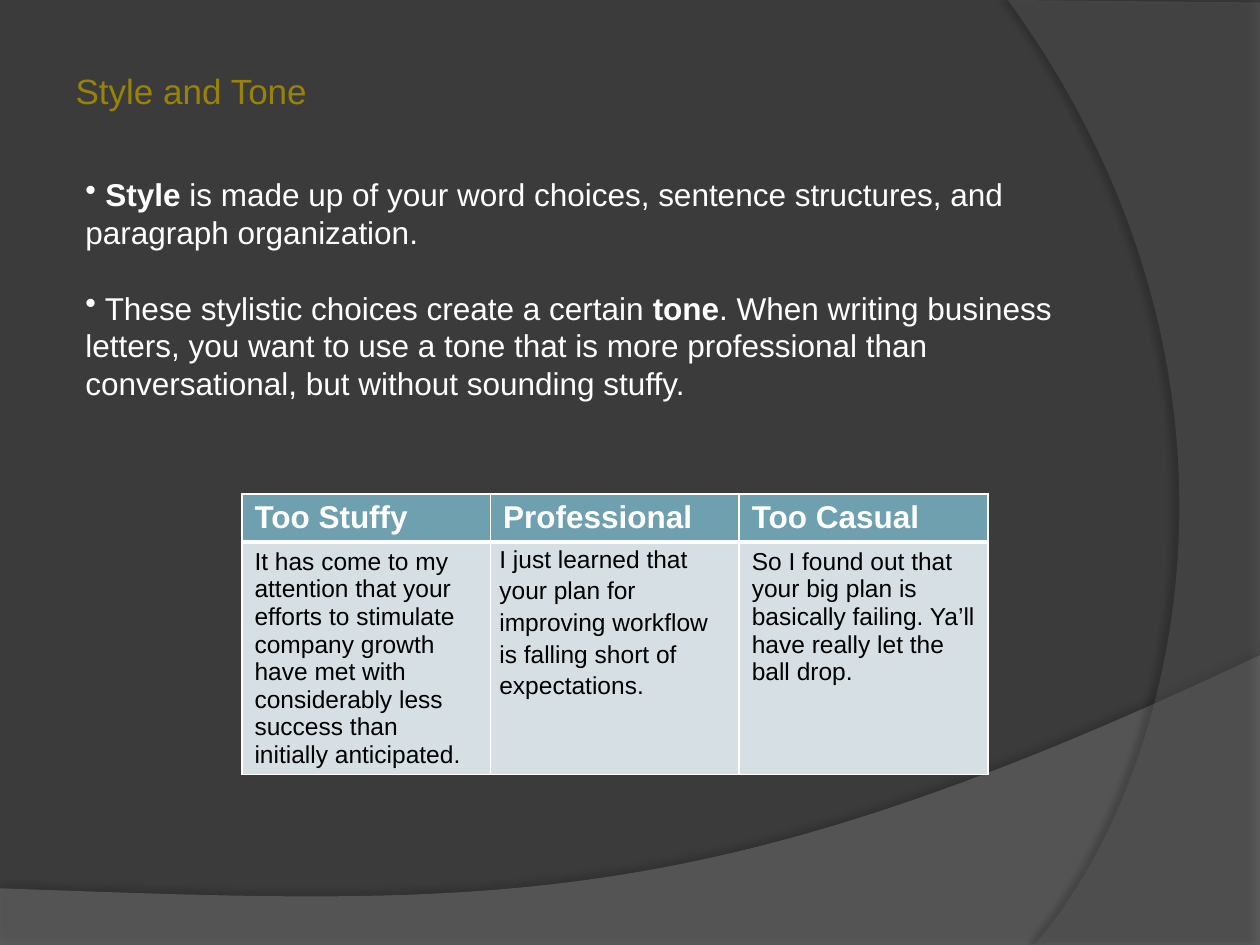
import pptx
import pptx.util
import pptx.oxml
import pptx.oxml.ns
import pptx.dml.color
import pptx.enum.text

WIDE = pptx.util.Inches(10)
HIGH = pptx.util.Inches(7.5)
FONT = "Arial"
WHITE = "FFFFFF"
HEADS = ["Too Stuffy", "Professional", "Too Casual"]
QUOTES = [
    "It has come to my attention that your efforts to stimulate company growth "
    "have met with considerably less success than initially anticipated.",
    "I just learned that your plan for improving workflow is falling short of expectations.",
    "So I found out that your big plan is basically failing. "
    "Ya’ll have really let the ball drop.",
]
POINTS = [
    [(" Style", True),
     (" is made up of your word choices, sentence structures, and paragraph organization.", False)],
    [(" These stylistic choices create a certain ", False), ("tone", True),
     (". When writing business letters, you want to use a tone that is more professional "
      "than conversational, but without sounding stuffy.", False)],
]


def across(share):
    """Turn a percentage of the slide width into a length."""
    return round(WIDE * share / 100)


def down(share):
    """Turn a percentage of the slide height into a length."""
    return round(HIGH * share / 100)


def box(left, top, width, height):
    """Turn four percentages into a place and a size."""
    return across(left), down(top), across(width), down(height)


def color(code):
    """Turn a hex string into a colour."""
    return pptx.dml.color.RGBColor.from_string(code)


def node(text):
    """Parse one drawing element."""
    head, tail = text.split(">", 1)
    names = pptx.oxml.ns.nsdecls("a")
    if head.endswith("/"):
        return pptx.oxml.parse_xml(f"{head[:-1]} {names}/>{tail}")
    return pptx.oxml.parse_xml(f"{head} {names}>{tail}")


def style(run, size, code, bold=False):
    """Set the font of a run."""
    font = run.font
    font.name, font.size, font.bold = FONT, pptx.util.Pt(size), bold
    font.color.rgb = color(code)


def curve(start, first, second, end, steps=60):
    """List points along a cubic curve."""
    spots = []
    for step in range(steps + 1):
        t = step / steps
        parts = ((1 - t) ** 3, 3 * t * (1 - t) ** 2, 3 * t * t * (1 - t), t ** 3)
        spots.append(tuple(sum(p * spot[axis] for p, spot in zip(parts, (start, first, second, end)))
                           for axis in (0, 1)))
    return spots


def wave(slide, spots, code, alpha, shade):
    """Draw a translucent shape with a soft shadow."""
    places = [(across(x), down(y)) for x, y in spots]
    build = slide.shapes.build_freeform(*places[0])
    build.add_line_segments(places[1:], close=True)
    shape = build.convert_to_shape()
    shape.fill.solid()
    shape.fill.fore_color.rgb = color(code)
    shape.line.fill.background()
    tint = shape.fill._xPr.find(".//" + pptx.oxml.ns.qn("a:srgbClr"))
    tint.append(node(f'<a:alpha val="{alpha * 1000}"/>'))
    dark, blur, gap, turn = shade
    blur, gap = pptx.util.Pt(blur), pptx.util.Pt(gap)
    shape._element.spPr.append(node(
        f'<a:effectLst><a:outerShdw blurRad="{blur}" dist="{gap}" dir="{turn * 60000}">'
        f'<a:srgbClr val="000000"><a:alpha val="{dark * 1000}"/></a:srgbClr>'
        '</a:outerShdw></a:effectLst>'))


def title(slide, text):
    """Place and format the title."""
    shape = slide.shapes.title
    shape.left, shape.top, shape.width, shape.height = box(5, 6.67, 40, 5.87)
    frame = shape.text_frame
    frame.text = text
    frame.vertical_anchor = pptx.enum.text.MSO_ANCHOR.TOP
    para = frame.paragraphs[0]
    para.alignment = pptx.enum.text.PP_ALIGN.LEFT
    style(para.runs[0], 20, "998307")


def bullets(slide, points):
    """Write the bulleted points."""
    frame = slide.shapes.add_textbox(*box(5.8, 17.73, 84.2, 25.6)).text_frame
    frame.word_wrap = True
    frame.vertical_anchor = pptx.enum.text.MSO_ANCHOR.MIDDLE
    for index, point in enumerate(points):
        para = frame.add_paragraph() if index else frame.paragraphs[0]
        if index:
            para.space_before = pptx.util.Pt(21.6)
        para._p.get_or_add_pPr().append(node('<a:buChar char="•"/>'))
        for text, bold in point:
            run = para.add_run()
            run.text = text
            style(run, 18, WHITE, bold)


def edges(cell, low):
    """Draw white borders, with the given weight at the bottom."""
    props = cell._tc.get_or_add_tcPr()
    for index, (side, weight) in enumerate(zip("LRTB", (1, 1, 1, low))):
        props.insert(index, node(
            f'<a:ln{side} w="{pptx.util.Pt(weight)}"><a:solidFill>'
            f'<a:srgbClr val="{WHITE}"/></a:solidFill></a:ln{side}>'))


def fill(cell, text, back, size, code, bold, low):
    """Write and colour one table cell."""
    cell.text_frame.text = text
    style(cell.text_frame.paragraphs[0].runs[0], size, code, bold)
    cell.fill.solid()
    cell.fill.fore_color.rgb = color(back)
    edges(cell, low)


def tones(slide):
    """Build the table that compares tones."""
    place = box(19.2, 52.27, 59.2, 31.6)
    frame = slide.shapes.add_table(2, len(HEADS), *place)
    table = frame.table
    for row, share in zip(table.rows, (4.4, 12.53)):
        row.height = down(share)
    frame.height = place[3]
    for col, (head, quote) in enumerate(zip(HEADS, QUOTES)):
        fill(table.cell(0, col), head, "6EA0B0", 18, WHITE, True, 3)
        fill(table.cell(1, col), quote, "D5DFE4", 14, "000000", False, 1)
    mid = table.cell(1, 1)
    mid.margin_left = mid.margin_right = pptx.util.Inches(0.07)
    mid.margin_top = mid.margin_bottom = 0
    mid.text_frame.paragraphs[0].line_spacing = 1.15


def main():
    """Build and save the slide."""
    deck = pptx.Presentation()
    deck.slide_width, deck.slide_height = WIDE, HIGH
    slide = deck.slides.add_slide(deck.slide_layouts[5])
    slide.background.fill.solid()
    slide.background.fill.fore_color.rgb = color("3B3B3B")
    hill = curve((100, 69.33), (55.9, 97.2), (39.1, 95.87), (0, 94))
    wave(slide, [(0, 100), (100, 100)] + hill, "7F7F7F", 45, (35, 4, 3.5, 270))
    arc = curve((82.1, 100), (93.5, 82.53), (101.8, 40), (80, 0))
    wave(slide, [(100, 0.27), (100, 100)] + arc, "5E5E5E", 40, (45, 4, 4, 180))
    tones(slide)
    bullets(slide, POINTS)
    title(slide, "Style and Tone")
    deck.save("out.pptx")


if __name__ == "__main__":
    main()
